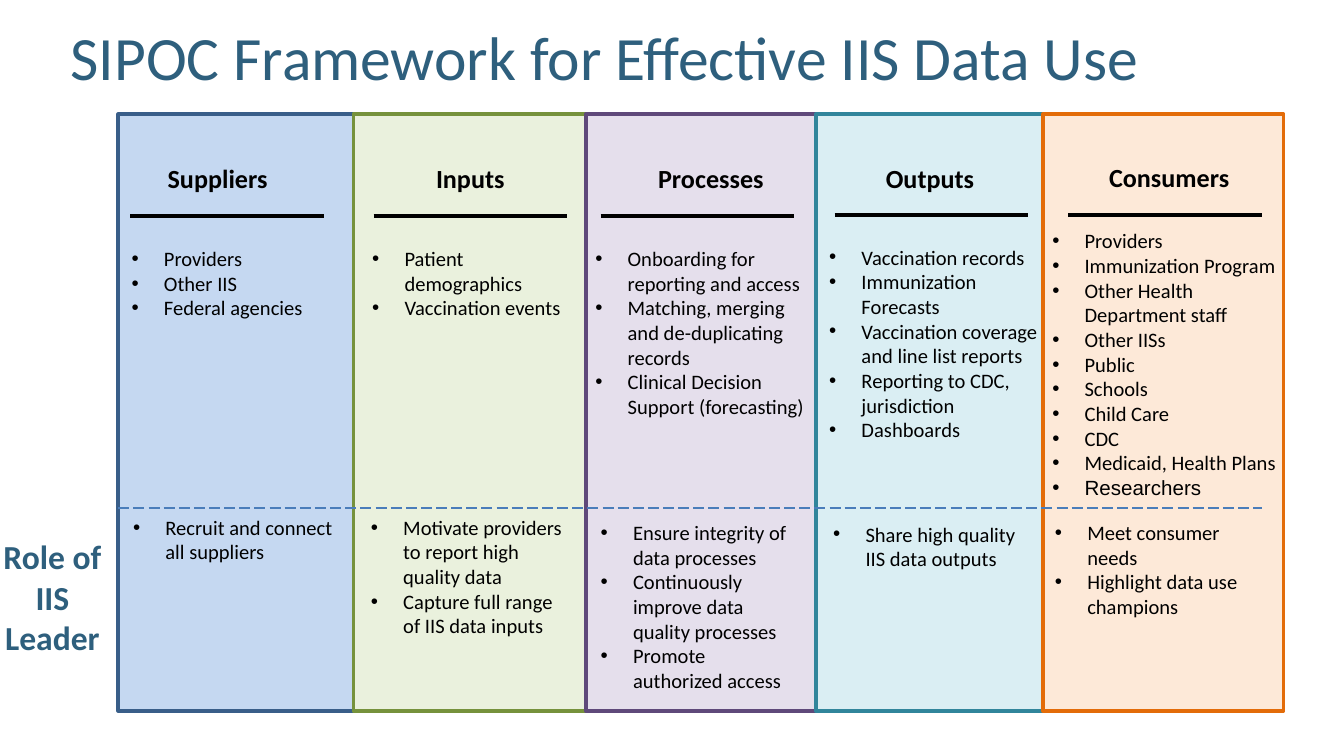
import pptx
import pptx.util
import pptx.dml.color
import pptx.enum.dml
import pptx.enum.shapes
import pptx.enum.text
import pptx.oxml
import pptx.oxml.ns
from dataclasses import dataclass

ALIGN = pptx.enum.text.PP_ALIGN
ANCHOR = pptx.enum.text.MSO_ANCHOR


@dataclass(frozen=True)
class Theme:
    font: str = "Calibri"
    alternate_font: str = "Arial"
    ink: str = "000000"
    accent: str = "2E5F7D"
    divider: str = "4A7DBA"
    title_size: float = 33
    role_size: float = 18
    heading_size: float = 14
    body_size: float = 11


@dataclass(frozen=True)
class Column:
    """One SIPOC column; all lengths are in grid cells."""
    heading: str
    fill: str
    border: str
    left: float
    heading_at: tuple
    rule_at: tuple
    items_at: tuple
    items: tuple
    roles_at: tuple
    roles: tuple


THEME = Theme()
CELL = 0.1  # the grid has square cells, 100 of them across the slide
GRID_COLUMNS, GRID_ROWS = 100, 56.25
PANEL_TOP, PANEL_HEIGHT, PANELS_RIGHT = 8.5, 44.4, 95.5
HEADING_SIZE = (15, 3.1)
RULE_LENGTH = 14.4
DIVIDER_ROW = 37.8
BULLET_INDENT = 2.4

COLUMNS = (
    Column("Suppliers", "C5D8F1", "395E89", 8.8, (8.7, 11.7), (9.7, 16.1),
           (9.1, 17.9, 15, 8.2),
           ("Providers", "Other IIS", "Federal agencies"),
           (9.2, 37.9, 16.5, 10),
           ("Recruit and connect all suppliers",)),
    Column("Inputs", "EAF1DD", "76923C", 26.3, (27.5, 11.7), (27.8, 16.1),
           (27, 17.9, 16.3, 10),
           ("Patient demographics", "Vaccination events"),
           (26.9, 37.9, 16, 10),
           ("Motivate providers to report high quality data",
            "Capture full range of IIS data inputs")),
    Column("Processes", "E5DFEC", "5F497A", 43.6, (45.4, 11.7), (44.7, 16.1),
           (43.6, 17.9, 17.9, 15.6),
           ("Onboarding for reporting and access",
            "Matching, merging and de-duplicating records",
            "Clinical Decision Support (forecasting)"),
           (44, 38.3, 16, 13.7),
           ("Ensure integrity of data processes",
            "Continuously improve data quality processes",
            "Promote authorized access")),
    Column("Outputs", "DAEEF3", "31859B", 60.7, (61.7, 11.7), (62.1, 16),
           (61, 17.8, 17.6, 17.4),
           ("Vaccination records", "Immunization Forecasts",
            "Vaccination coverage and line list reports",
            "Reporting to CDC, jurisdiction", "Dashboards"),
           (61.3, 38.4, 16, 4.5),
           ("Share high quality IIS data outputs",)),
    Column("Consumers", "FDE9D8", "E36C09", 77.6, (79.5, 11.6), (79.5, 16),
           (77.6, 16.6, 18.3, 23),
           ("Providers", "Immunization Program",
            "Other Health Department staff", "Other IISs", "Public", "Schools",
            "Child Care", "CDC", "Medicaid, Health Plans", "Researchers"),
           (77.8, 38.3, 17.3, 8.2),
           ("Meet consumer needs", "Highlight data use champions")),
)


def cells(count):
    return pptx.util.Inches(count * CELL)


def rgb(value):
    return pptx.dml.color.RGBColor.from_string(value)


def add_bullet(paragraph):
    properties = paragraph._p.get_or_add_pPr()
    properties.set("marL", str(cells(BULLET_INDENT)))
    properties.set("indent", str(-cells(BULLET_INDENT)))
    namespace = pptx.oxml.ns.nsdecls("a")
    for xml in (f'<a:buClr {namespace}><a:srgbClr val="{THEME.ink}"/></a:buClr>',
                f'<a:buFont {namespace} typeface="Arial"/>',
                f'<a:buChar {namespace} char="•"/>'):
        properties.append(pptx.oxml.parse_xml(xml))


def add_text(slide, box, *lines, size=THEME.body_size, color=THEME.ink,
             bold=False, align=ALIGN.LEFT, anchor=ANCHOR.TOP, bullets=False,
             line_spacing=None):
    """Add a text box with one paragraph for each line."""
    shape = slide.shapes.add_textbox(*map(cells, box))
    frame = shape.text_frame
    frame.word_wrap = True
    frame.vertical_anchor = anchor
    frame.margin_left = frame.margin_right = cells(0.7)
    frame.margin_top = frame.margin_bottom = cells(0.4)
    for index, line in enumerate(lines):
        paragraph = frame.add_paragraph() if index else frame.paragraphs[0]
        if bullets:
            add_bullet(paragraph)
        paragraph.alignment = align
        if line_spacing:
            paragraph.line_spacing = line_spacing
        run = paragraph.add_run()
        run.text = line
        run.font.name = THEME.font
        run.font.size = pptx.util.Pt(size)
        run.font.bold = bold
        run.font.color.rgb = rgb(color)
    return shape


def add_panel(slide, box, fill, border):
    shape = slide.shapes.add_shape(
        pptx.enum.shapes.MSO_SHAPE.RECTANGLE, *map(cells, box))
    shape.shadow.inherit = False
    shape.fill.solid()
    shape.fill.fore_color.rgb = rgb(fill)
    shape.line.color.rgb = rgb(border)
    shape.line.width = pptx.util.Pt(2)


def add_rule(slide, left, row, length, color, width, dash=None):
    connector = slide.shapes.add_connector(
        pptx.enum.shapes.MSO_CONNECTOR.STRAIGHT,
        cells(left), cells(row), cells(left + length), cells(row))
    connector.line.color.rgb = rgb(color)
    connector.line.width = pptx.util.Pt(width)
    if dash:
        connector.line.dash_style = dash
    properties = connector._element.spPr
    properties.append(properties.makeelement(pptx.oxml.ns.qn("a:effectLst")))


def main():
    presentation = pptx.Presentation()
    presentation.slide_width = cells(GRID_COLUMNS)
    presentation.slide_height = cells(GRID_ROWS)
    slide = presentation.slides.add_slide(presentation.slide_layouts[6])

    # Title
    add_text(slide, (0, 2.1, 90, 4.8),
             "SIPOC Framework for Effective IIS Data Use",
             size=THEME.title_size, color=THEME.accent, align=ALIGN.CENTER,
             anchor=ANCHOR.MIDDLE, line_spacing=0.9)

    # Coloured panels, each reaching to the next
    right_edges = [column.left for column in COLUMNS[1:]] + [PANELS_RIGHT]
    for column, right in zip(COLUMNS, right_edges):
        add_panel(slide,
                  (column.left, PANEL_TOP, right - column.left, PANEL_HEIGHT),
                  column.fill, column.border)

    # Divider between the framework and the leader's role
    first_left = COLUMNS[0].left
    last_right = COLUMNS[-1].rule_at[0] + RULE_LENGTH
    add_rule(slide, first_left, DIVIDER_ROW, last_right - first_left,
             THEME.divider, 0.75, pptx.enum.dml.MSO_LINE.LONG_DASH)

    # Headings, rules and lists
    for column in COLUMNS:
        add_text(slide, column.heading_at + HEADING_SIZE, column.heading,
                 size=THEME.heading_size, bold=True, align=ALIGN.CENTER)
        add_rule(slide, *column.rule_at, RULE_LENGTH, THEME.ink, 2.25)
        items = add_text(slide, column.items_at, *column.items, bullets=True)
        add_text(slide, column.roles_at, *column.roles, bullets=True)
    # The closing entry of the last list has its own font
    items.text_frame.paragraphs[-1].runs[0].font.name = THEME.alternate_font

    # Row label
    add_text(slide, (-0.5, 39.5, 8.8, 9.8), "Role of IIS Leader",
             size=THEME.role_size, color=THEME.accent, bold=True,
             align=ALIGN.CENTER)

    presentation.save("out.pptx")


if __name__ == "__main__":
    main()
